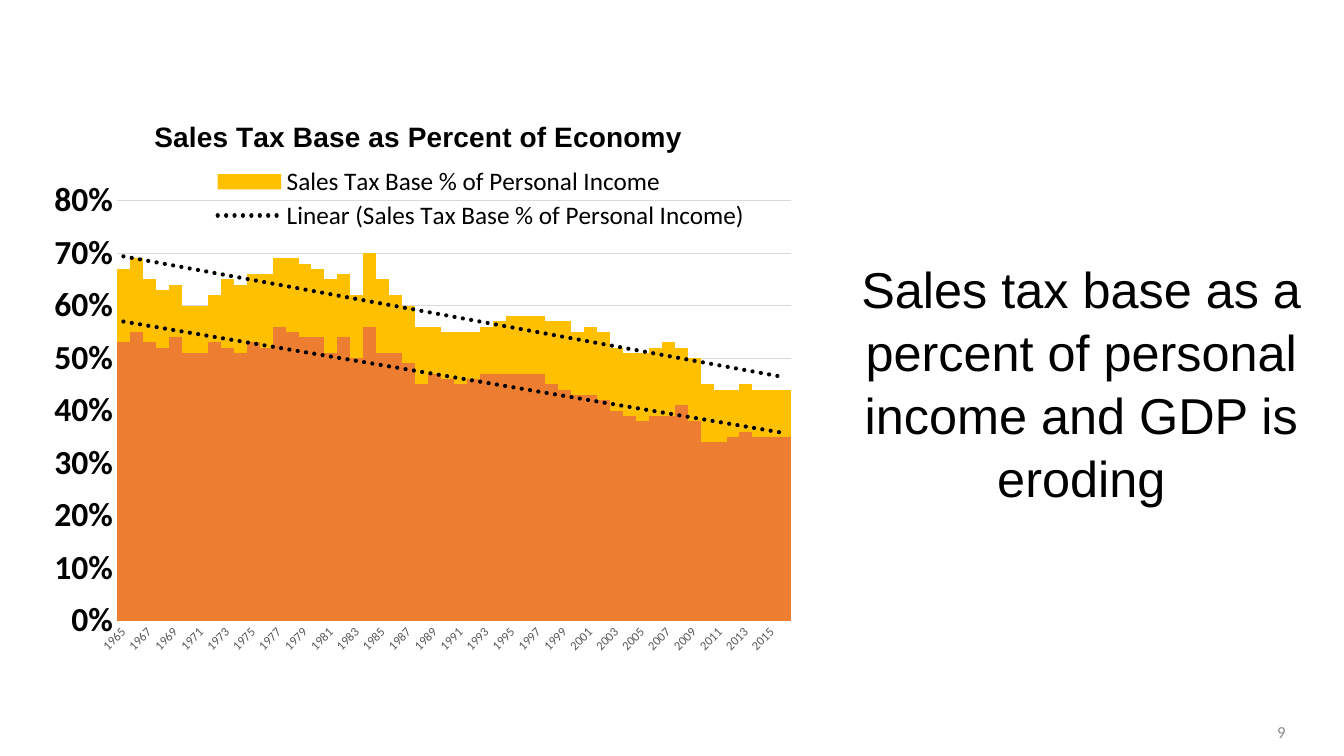
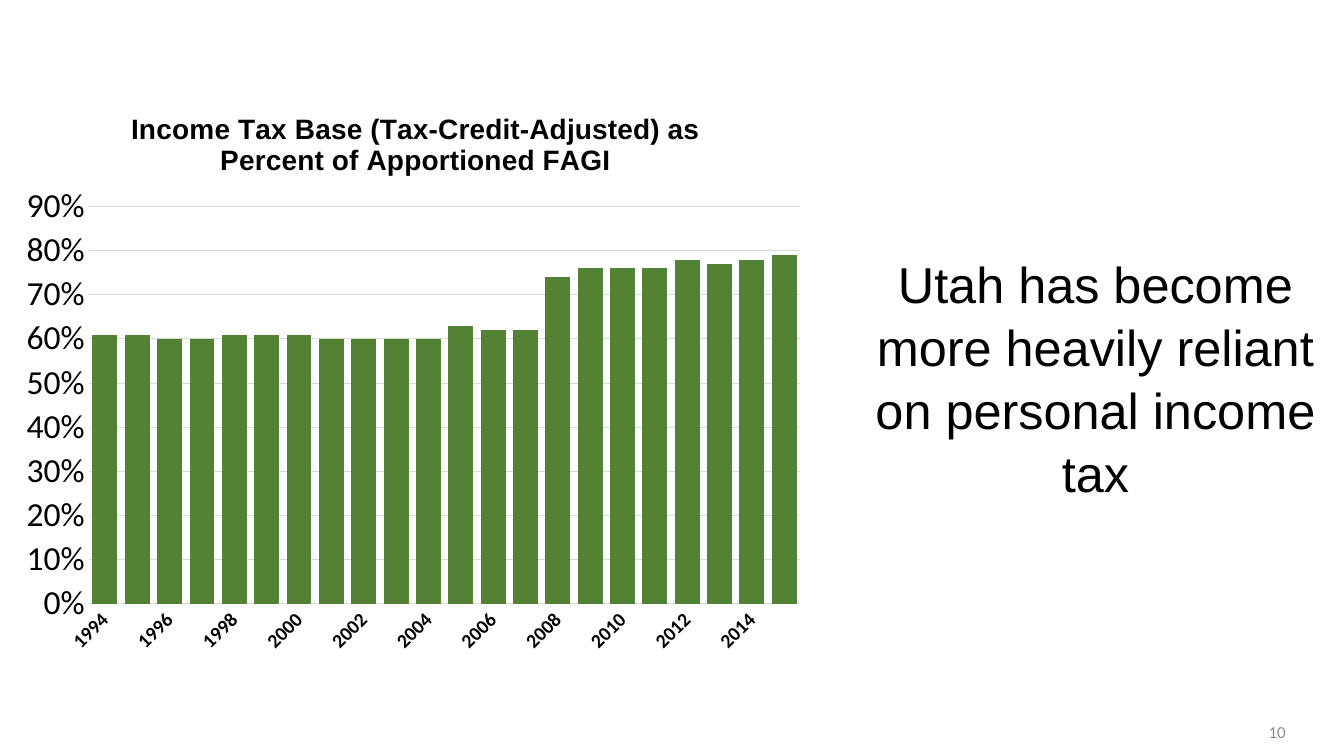
from lxml import etree
from pptx import Presentation
from pptx.chart.data import CategoryChartData
from pptx.dml.color import RGBColor
from pptx.enum.chart import XL_CHART_TYPE, XL_LEGEND_POSITION, XL_TICK_MARK
from pptx.enum.text import MSO_ANCHOR, PP_ALIGN
from pptx.oxml import parse_xml
from pptx.oxml.ns import qn
from pptx.util import Inches, Pt

CLUSTERED = XL_CHART_TYPE.COLUMN_CLUSTERED
LEGEND_BOTTOM = XL_LEGEND_POSITION.BOTTOM
NO_TICK = XL_TICK_MARK.NONE
MIDDLE = MSO_ANCHOR.MIDDLE
CENTER, RIGHT = PP_ALIGN.CENTER, PP_ALIGN.RIGHT

BLACK, GRAY, GRID = "000000", "595959", "D9D9D9"
NUMBER_GRAY = "8C8C8C"
GOLD, ORANGE, GREEN = "FFC000", "ED7D31", "548235"

TREND_XML = (
    '<c:trendline xmlns:c="http://schemas.openxmlformats.org/drawingml/2006/chart"'
    ' xmlns:a="http://schemas.openxmlformats.org/drawingml/2006/main">'
    '<c:spPr><a:ln w="38100" cap="rnd"><a:solidFill><a:srgbClr val="000000"/></a:solidFill>'
    '<a:prstDash val="sysDot"/></a:ln></c:spPr>'
    '<c:trendlineType val="linear"/><c:dispRSqr val="0"/><c:dispEq val="0"/></c:trendline>')

# Boxes are left, top, width, height in inches on the slide.
SLIDES = [
    dict(number="9", message="Sales tax base as a percent of personal income and GDP is eroding",
         message_box=(8.26, 2.49, 4.93, 2.52),
         title="Sales Tax Base as Percent of Economy", title_at=(1.48, 1.13),
         chart_box=(0.26, 0.92, 7.73, 6), plot_box=(1.16, 1.99, 6.69, 4.17),
         legend_box=(2.07, 1.62, 5.4, 0.7),
         first_year=1965, top=0.8, gap=0, year_style=(9, GRAY, False), value_bold=True,
         trend=True,
         series=[
             ("Sales Tax Base % of Personal Income", GOLD,
              [67, 69, 65, 63, 64, 60, 60, 62, 65, 64, 66, 66, 69, 69, 68, 67, 65, 66,
               62, 70, 65, 62, 60, 56, 56, 55, 55, 55, 56, 57, 58, 58, 58, 57, 57, 55,
               56, 55, 52, 51, 51, 52, 53, 52, 50, 45, 44, 44, 45, 44, 44, 44]),
             ("Sales Tax Base % of GDP", ORANGE,
              [53, 55, 53, 52, 54, 51, 51, 53, 52, 51, 53, 52, 56, 55, 54, 54, 51, 54,
               50, 56, 51, 51, 49, 45, 47, 46, 45, 46, 47, 47, 47, 47, 47, 45, 44, 43,
               43, 42, 40, 39, 38, 39, 39, 41, 38, 34, 34, 35, 36, 35, 35, 35])]),
    dict(number="10", message="Utah has become more heavily reliant on personal income tax",
         message_box=(8.4, 2.44, 4.93, 2.52),
         title="Income Tax Base (Tax-Credit-Adjusted) as Percent of Apportioned FAGI",
         title_at=(1.25, 1.05),
         chart_box=(0.11, 0.85, 7.99, 5.75), plot_box=(0.88, 2.05, 7.06, 3.94),
         legend_box=None,
         first_year=1994, top=0.9, gap=30, year_style=(14, BLACK, True), value_bold=False,
         trend=False,
         series=[
             ("Series 1", GREEN,
              [61, 61, 60, 60, 61, 61, 61, 60, 60, 60, 60, 63, 62, 62, 74, 76, 76, 76,
               78, 77, 78, 79])]),
]


def style(font, size, color, bold=False, name="Calibri"):
    font.size, font.bold, font.name = Pt(size), bold, name
    font.color.rgb = RGBColor.from_string(color)


def place(parent, successor, chart_box, box, inner=False):
    """Give a chart part a manual layout, from a box on the slide."""
    for old in parent.findall(qn("c:layout")):
        parent.remove(old)
    layout = etree.Element(qn("c:layout"))
    manual = etree.SubElement(layout, qn("c:manualLayout"))
    settings = [("layoutTarget", "inner")] if inner else []
    settings += [("xMode", "edge"), ("yMode", "edge")]
    left, top, width, height = chart_box
    settings += [("x", (box[0] - left) / width), ("y", (box[1] - top) / height)]
    if len(box) == 4:
        settings += [("w", box[2] / width), ("h", box[3] / height)]
    for tag, val in settings:
        etree.SubElement(manual, qn("c:" + tag)).set("val", str(val))
    parent.find(qn(successor)).addprevious(layout)


prs = Presentation()
prs.slide_width, prs.slide_height = Inches(13.33), Inches(7.5)

for content in SLIDES:
    s = prs.slides.add_slide(prs.slide_layouts[6])

    sp = s.shapes.add_textbox(Inches(12.06), Inches(7.06), Inches(0.79), Inches(0.4))
    tf = sp.text_frame
    tf.word_wrap, tf.vertical_anchor = True, MIDDLE
    p = tf.paragraphs[0]
    p.text, p.alignment, p.space_after = content["number"], RIGHT, Pt(6)
    style(p.runs[0].font, 12, NUMBER_GRAY)

    sp = s.shapes.add_textbox(*map(Inches, content["message_box"]))
    tf = sp.text_frame
    tf.word_wrap = True
    p = tf.paragraphs[0]
    p.text, p.alignment, p.line_spacing = content["message"], CENTER, 1.04
    style(p.runs[0].font, 36, BLACK, name="Arial")

    data = CategoryChartData(number_format="0%")
    first = content["first_year"]
    data.categories = [str(first + i) for i in range(len(content["series"][0][2]))]
    for name, color, percents in content["series"]:
        data.add_series(name, [v / 100 for v in percents])
    chart_box = content["chart_box"]
    chart = s.shapes.add_chart(CLUSTERED, *map(Inches, chart_box), data).chart
    style(chart.font, 10, BLACK)

    chart.has_title = True
    tf = chart.chart_title.text_frame
    tf.text = content["title"]
    style(tf.paragraphs[0].runs[0].font, 20, BLACK, True, "Arial")
    title = chart._chartSpace.chart.find(qn("c:title"))
    place(title, "c:overlay", chart_box, content["title_at"])

    plot = chart.plots[0]
    plot.vary_by_categories = False
    plot.gap_width, plot.overlap = content["gap"], 100
    for series, (name, color, percents) in zip(plot.series, content["series"]):
        series.format.fill.solid()
        series.format.fill.fore_color.rgb = RGBColor.from_string(color)
        series.invert_if_negative = False
        if content["trend"]:
            series._element.find(qn("c:cat")).addprevious(parse_xml(TREND_XML))
    plot_area = chart._chartSpace.chart.plotArea
    place(plot_area, "c:barChart", chart_box, content["plot_box"], inner=True)

    years, values = chart.category_axis, chart.value_axis
    for axis in (years, values):
        axis.major_tick_mark = axis.minor_tick_mark = NO_TICK
    style(years.tick_labels.font, *content["year_style"])
    years.format.line.color.rgb = RGBColor.from_string(GRID)
    years.format.line.width = Pt(0.75)
    years._element.find(qn("c:txPr")).find(qn("a:bodyPr")).set("rot", "-2700000")
    skip = etree.Element(qn("c:tickLblSkip"), val="2")
    years._element.find(qn("c:noMultiLvlLbl")).addprevious(skip)

    style(values.tick_labels.font, 24, BLACK, content["value_bold"])
    values.tick_labels.number_format = "0%"
    values.tick_labels.number_format_is_linked = False
    values.minimum_scale, values.maximum_scale, values.major_unit = 0, content["top"], 0.1
    values.format.line.fill.background()
    values.major_gridlines.format.line.color.rgb = RGBColor.from_string(GRID)
    values.major_gridlines.format.line.width = Pt(0.75)

    chart.has_legend = content["legend_box"] is not None
    if chart.has_legend:
        legend = chart.legend
        legend.position, legend.include_in_layout = LEGEND_BOTTOM, True
        style(legend.font, 18, BLACK)
        place(legend._element, "c:overlay", chart_box, content["legend_box"])
        # Hide the second series and its trend line.
        for index in ("1", "3"):
            entry = etree.Element(qn("c:legendEntry"))
            etree.SubElement(entry, qn("c:idx"), val=index)
            etree.SubElement(entry, qn("c:delete"), val="1")
            legend._element.find(qn("c:layout")).addprevious(entry)

prs.save("out.pptx")
